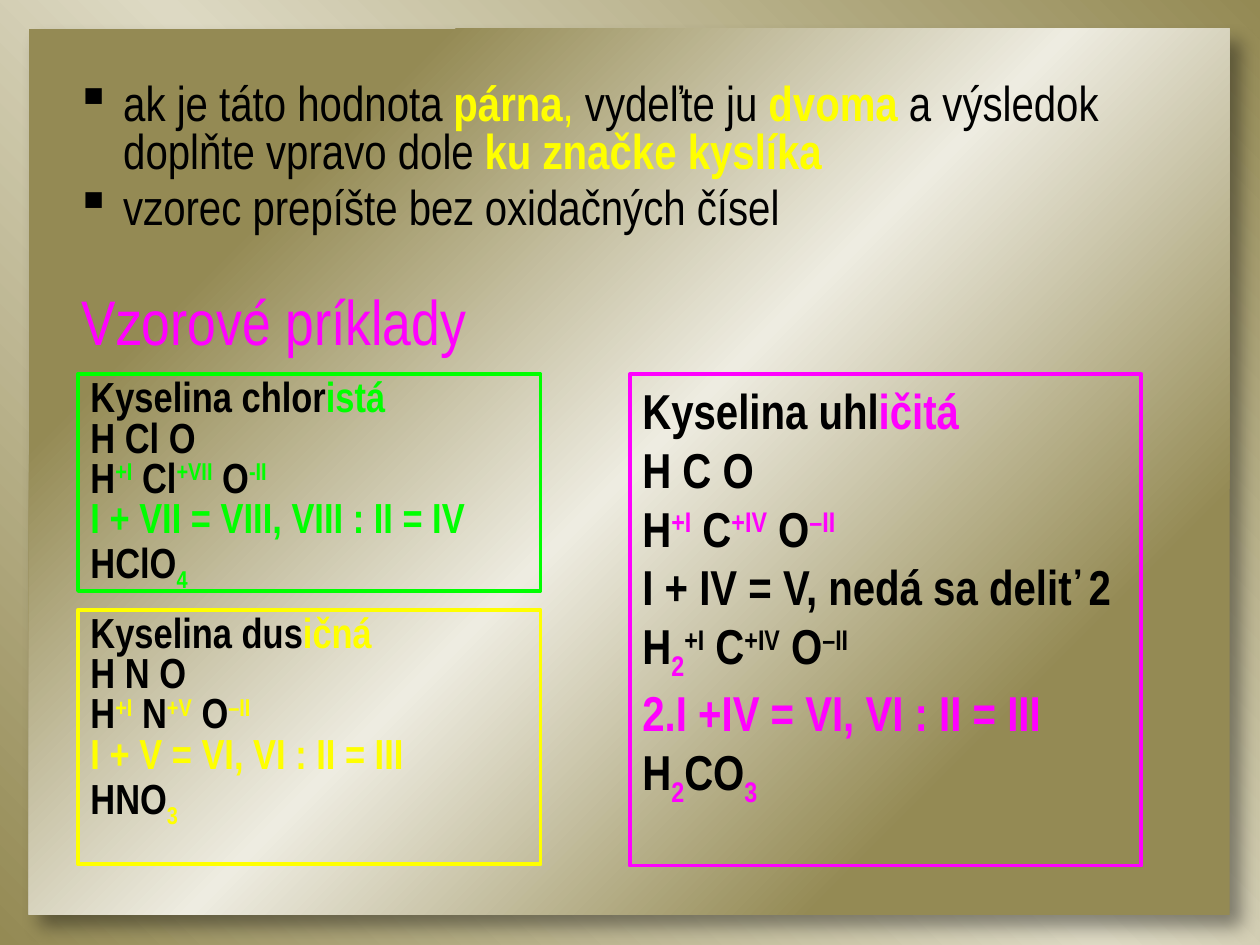
from lxml.etree import SubElement
from pptx import Presentation
from pptx.dml.color import RGBColor
from pptx.enum.shapes import MSO_SHAPE
from pptx.enum.text import MSO_ANCHOR, PP_ALIGN
from pptx.oxml import parse_xml
from pptx.oxml.ns import nsdecls, qn
from pptx.util import Inches, Pt

FONT = "Arial Narrow"
BLACK, YELLOW, GREEN, PINK = "000000", "FFFF00", "00FF00", "FF00FF"
DARK, CREAM, SAND = "948A54", "EEECE1", "DDD9C3"
# Prefix of a text part -> (takes the accent colour, baseline in thousandths of a percent)
MARKS = {"*": (True, 0), "^": (True, 30000), "_": (True, -25000), "~": (False, 30000)}


def rgb(value):
    return RGBColor.from_string(value)


def gradient(stops, angle):
    gs = "".join(f'<a:gs pos="{pos * 1000}"><a:srgbClr val="{color}"/></a:gs>'
                 for pos, color in stops)
    return parse_xml(f'<a:gradFill {nsdecls("a")} rotWithShape="1"><a:gsLst>{gs}</a:gsLst>'
                     f'<a:lin ang="{angle * 60000}" scaled="0"/></a:gradFill>')


class SlideBuilder:
    def __init__(self, slide):
        self.s = slide

    def background(self, stops, angle):
        fill = self.s.background.fill
        fill.solid()
        bg_pr = self.s.element.find(".//" + qn("p:bgPr"))
        bg_pr.replace(bg_pr[0], gradient(stops, angle))

    def rectangle(self, box):
        sp = self.s.shapes.add_shape(MSO_SHAPE.RECTANGLE, *map(Inches, box))
        sp.shadow.inherit = False
        sp.fill.background()
        sp.line.fill.background()
        return sp

    def panel(self, box, stops, angle):
        sp = self.rectangle(box)
        pr = sp._element.spPr
        pr.replace(pr.find(qn("a:noFill")), gradient(stops, angle))
        shadow = SubElement(pr.find(qn("a:effectLst")), qn("a:outerShdw"),
                            blurRad=str(Pt(10)), dist=str(Pt(10)),
                            dir=str(50 * 60000), algn="tl", rotWithShape="0")
        color = SubElement(shadow, qn("a:srgbClr"), val=BLACK)
        SubElement(color, qn("a:alpha"), val="40000")

    def set_lines(self, tf, lines, size, accent, bold=False, spacing=None):
        """Fill a frame; '|' divides a line into parts, a mark may open each part."""
        tf.word_wrap = True
        tf.vertical_anchor = MSO_ANCHOR.TOP
        for i, line in enumerate(lines):
            p = tf.paragraphs[0] if i == 0 else tf.add_paragraph()
            p.alignment = PP_ALIGN.LEFT
            p.font.name, p.font.size = FONT, Pt(size)
            if spacing:
                p.line_spacing = spacing
            for part in line.split("|"):
                accented, baseline = MARKS.get(part[0], (False, 0))
                r = p.add_run()
                r.text = part[1:] if part[0] in MARKS else part
                r.font.name, r.font.size = FONT, Pt(size)
                r.font.color.rgb = rgb(accent if accented else BLACK)
                r.font.bold = bold or (accented and part != "*,")
                if baseline:
                    r.font._element.set("baseline", str(baseline))

    def text_box(self, box):
        return self.s.shapes.add_textbox(*map(Inches, box)).text_frame

    def bullets(self, box, lines, size, accent):
        tf = self.text_box(box)
        self.set_lines(tf, lines, size, accent, spacing=0.8)
        for p in tf.paragraphs:
            p.space_before = Pt(size * 0.2)
            pr = p._p.get_or_add_pPr()
            pr.set("marL", str(Inches(0.38)))
            pr.set("indent", str(-Inches(0.38)))
            bullet = parse_xml(f'<a:buChar {nsdecls("a")} char="▪"/>')
            pr.insert_element_before(bullet, "a:tabLst", "a:defRPr", "a:extLst")

    def heading(self, box, text, size, color):
        tf = self.text_box(box)
        self.set_lines(tf, [text], size, color)
        tf.paragraphs[0].runs[0].font.color.rgb = rgb(color)

    def example(self, box, lines, size, color, spacing=None):
        sp = self.rectangle(box)
        sp.line.color.rgb = rgb(color)
        sp.line.width = Pt(2.25)
        self.set_lines(sp.text_frame, lines, size, color, bold=True, spacing=spacing)


def main():
    prs = Presentation()
    prs.slide_width, prs.slide_height = Inches(10), Inches(7.5)
    b = SlideBuilder(prs.slides.add_slide(prs.slide_layouts[6]))

    # Background and raised panel
    b.background([(0, DARK), (50, SAND), (100, DARK)], 315)
    b.panel((0.23, 0.23, 9.53, 7.03), [(20, DARK), (50, CREAM), (80, DARK)], 45)

    # Rules and heading
    b.bullets((0.5, 0.62, 9, 1.4), [
        "ak je táto hodnota |*párna|*,| vydeľte ju |*dvoma"
        "| a výsledok doplňte vpravo dole |*ku značke kyslíka",
        "vzorec prepíšte bez oxidačných čísel"], 28, YELLOW)
    b.heading((0.55, 2.19, 4.53, 0.71), "Vzorové príklady", 36, PINK)

    # Worked examples
    b.example((0.62, 2.97, 3.67, 1.72), [
        "Kyselina chlor|*istá", "H Cl O", "H|^+I| Cl|^+VII| O|^-II",
        "*I + VII = VIII, VIII : II = IV", "HClO|_4"], 24, GREEN, 0.8)
    b.example((0.62, 4.84, 3.67, 2.02), [
        "Kyselina dus|*ičná", "H N O", "H|^+I| N|^+V| O|^–II",
        "*I + V = VI, VI : II = III", "HNO|_3"], 24, YELLOW, 0.8)
    b.example((5, 2.97, 4.06, 3.9), [
        "Kyselina uhl|*ičitá", "H C O", "H|^+I| C|^+IV| O|^–II",
        "I + IV = V, nedá sa deliť 2", "H|_2|~+I| C|~+IV| O|~–II",
        "*2.I +IV = VI, VI : II = III", "H|_2|CO|_3"], 28, PINK)

    prs.save("out.pptx")


if __name__ == "__main__":
    main()
